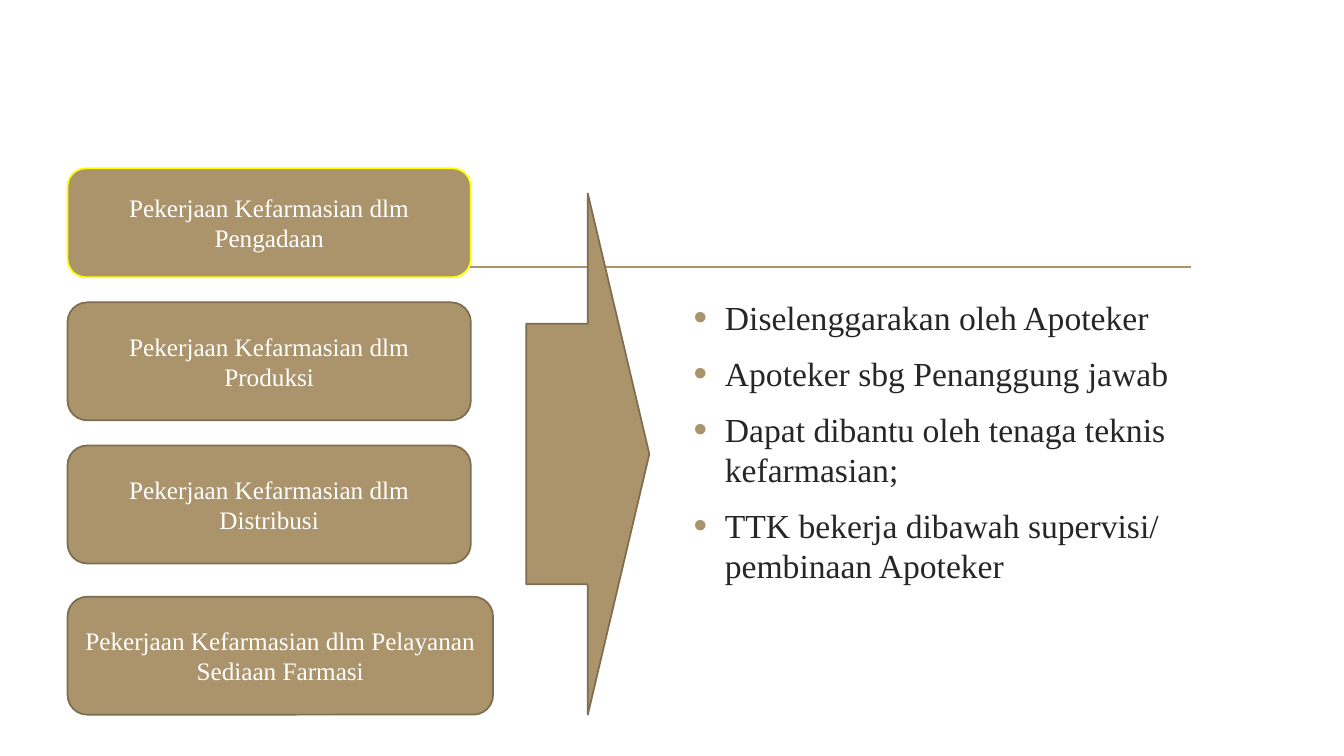
from dataclasses import dataclass

from lxml.etree import SubElement
from pptx import Presentation
from pptx.dml.color import RGBColor as Color
from pptx.enum.shapes import MSO_CONNECTOR as Connector, MSO_SHAPE as Shape
from pptx.enum.text import MSO_ANCHOR as Anchor, MSO_AUTO_SIZE as AutoSize, PP_ALIGN as Align
from pptx.oxml.ns import qn
from pptx.util import Pt

PX = 9144


@dataclass(frozen=True)
class Theme:
    font: str = "Times New Roman"
    accent: str = "AB946B"
    outline: str = "7F6D4F"
    highlight: str = "FFFF00"
    ink: str = "262626"
    white: str = "FFFFFF"
    body_size: int = 24
    card_size: int = 18
    line_width: float = 1.25


THEME = Theme()

TASKS = [
    ("Pekerjaan Kefarmasian dlm Pengadaan", 0, 400, 108, THEME.highlight),
    ("Pekerjaan Kefarmasian dlm Produksi", 133, 400, 117, THEME.outline),
    ("Pekerjaan Kefarmasian dlm Distribusi", 275, 400, 117, THEME.outline),
    ("Pekerjaan Kefarmasian dlm Pelayanan Sediaan Farmasi", 425, 422, 117, THEME.outline),
]
RULES = [
    "Diselenggarakan oleh Apoteker",
    "Apoteker sbg Penanggung jawab",
    "Dapat dibantu oleh tenaga teknis kefarmasian;",
    "TTK bekerja dibawah supervisi/ pembinaan Apoteker",
]


def emu(*lengths):
    return [length * PX for length in lengths]


def add_text(para, text, size, color):
    span = para.add_run()
    span.text = text
    span.font.name = THEME.font
    span.font.size = Pt(size)
    span.font.color.rgb = Color.from_string(color)


def add_block(page, kind, box, outline):
    block = page.shapes.add_shape(kind, *emu(*box))
    block.shadow.inherit = False
    block.fill.solid()
    block.fill.fore_color.rgb = Color.from_string(THEME.accent)
    block.line.color.rgb = Color.from_string(outline)
    block.line.width = Pt(THEME.line_width)
    return block


def add_divider(page, left, top, width):
    divider = page.shapes.add_connector(Connector.STRAIGHT, *emu(left, top, left + width, top))
    divider.line.color.rgb = Color.from_string(THEME.accent)
    divider.line.width = Pt(THEME.line_width)
    SubElement(divider._element.spPr, qn("a:effectLst"))


def add_tasks(page, left, top):
    for text, offset, width, height, outline in TASKS:
        card = add_block(page, Shape.ROUNDED_RECTANGLE, (left, top + offset, width, height), outline)
        frame = card.text_frame
        frame.word_wrap = True
        frame.vertical_anchor = Anchor.MIDDLE
        para = frame.paragraphs[0]
        para.alignment = Align.CENTER
        add_text(para, text, THEME.card_size, THEME.white)


def set_bullet(para, indent):
    properties = para._p.get_or_add_pPr()
    properties.set("marL", str(indent * PX))
    properties.set("indent", str(-indent * PX))
    color = SubElement(properties, qn("a:buClr"))
    SubElement(color, qn("a:srgbClr"), val=THEME.accent)
    SubElement(properties, qn("a:buSzPct"), val="115000")
    SubElement(properties, qn("a:buFont"), typeface="Arial")
    SubElement(properties, qn("a:buChar"), char="•")


def add_rules(page, box):
    body = page.placeholders[1]
    body.left, body.top, body.width, body.height = emu(*box)
    frame = body.text_frame
    frame.word_wrap = True
    frame.auto_size = AutoSize.NONE
    frame.vertical_anchor = Anchor.TOP
    for index, text in enumerate(RULES):
        para = frame.add_paragraph() if index else frame.paragraphs[0]
        set_bullet(para, 31)
        para.space_before = Pt(5 if index else 0)
        para.space_after = Pt(6)
        add_text(para, text, THEME.body_size, THEME.ink)


def build_page(deck):
    page = deck.slides.add_slide(deck.slide_layouts[1])
    title = page.shapes.title._element
    title.getparent().remove(title)
    add_divider(page, 153, 265, 1028)
    add_rules(page, (678, 290, 589, 380))
    add_tasks(page, 67, 167)
    add_block(page, Shape.RIGHT_ARROW, (522, 192, 122, 517), THEME.outline)


def main():
    deck = Presentation()
    deck.slide_width, deck.slide_height = emu(1333, 750)
    build_page(deck)
    deck.save("out.pptx")


if __name__ == "__main__":
    main()
